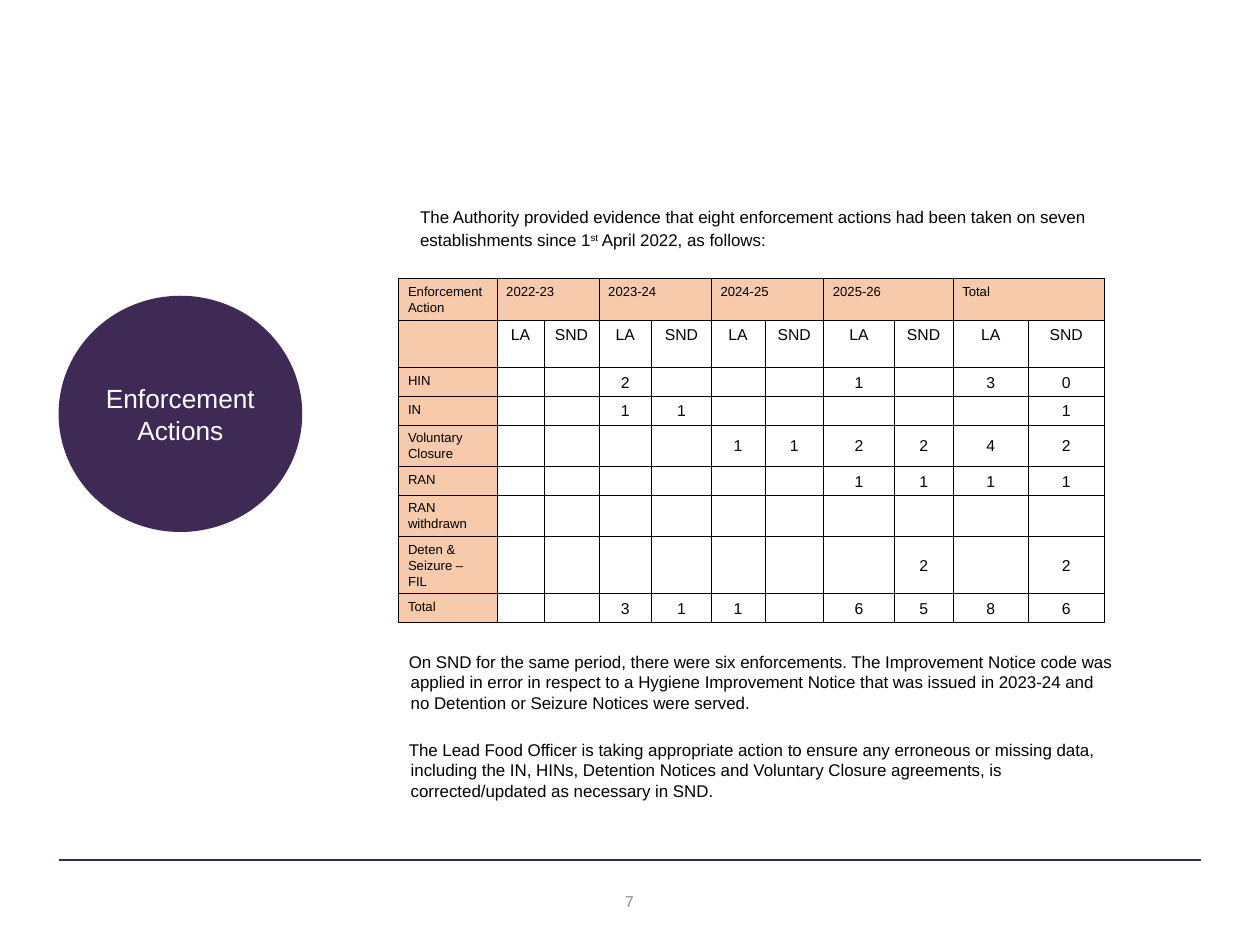
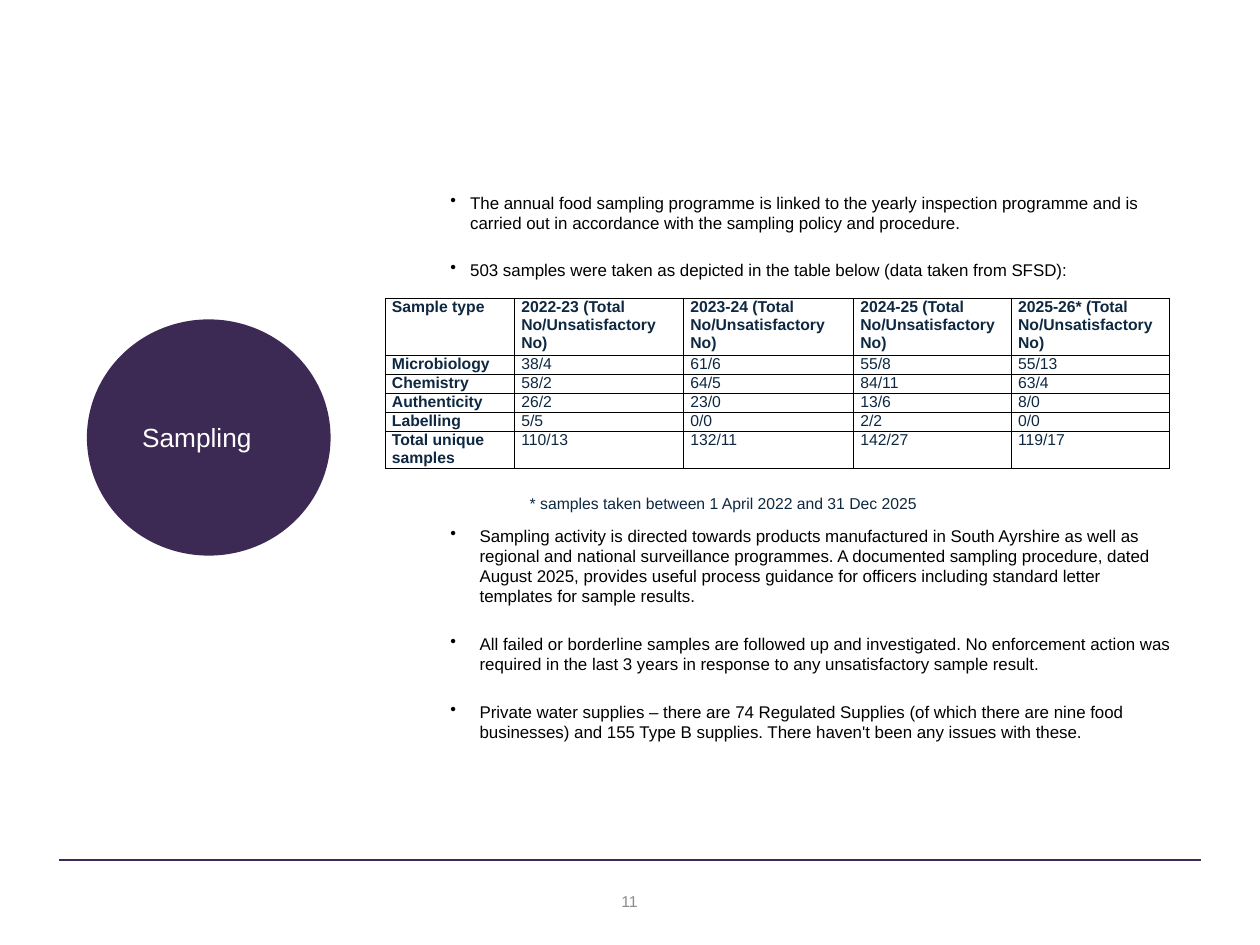
"""Build the enforcement and sampling slides of an audit presentation."""
import lxml.etree
import pptx
import pptx.dml.color
import pptx.enum.shapes
import pptx.enum.text
import pptx.oxml.ns
import pptx.util

Inches = pptx.util.Inches
Pt = pptx.util.Pt
ALIGN = pptx.enum.text.PP_ALIGN
ANCHOR = pptx.enum.text.MSO_ANCHOR

COLOURS = {
    "purple": "3F2A56",
    "plum": "3D2A54",
    "peach": "F7CAAC",
    "navy": "0E2841",
    "grey": "8C8C8C",
    "black": "000000",
    "white": "FFFFFF",
}
FONT = "Arial"
BODY = {"size": 12.9, "colour": "black"}
BODY_LINE = {"line_spacing": Pt(15.4)}
LABEL = {"size": 10, "colour": "black"}
COUNT = {"size": 12, "colour": "black"}
LABEL_PARAGRAPH = {"line_spacing": Pt(12.1)}
COUNT_PARAGRAPH = {"line_spacing": Pt(14.6), "alignment": ALIGN.CENTER}

INTRO = (
    "The Authority provided evidence that eight enforcement actions had been taken "
    "on seven establishments since 1",
    "st",
    " April 2022, as follows:",
)
FINDINGS = [
    "On SND for the same period, there were six enforcements. The Improvement Notice "
    "code was applied in error in respect to a Hygiene Improvement Notice that was "
    "issued in 2023-24 and no Detention or Seizure Notices were served.",
    "The Lead Food Officer is taking appropriate action to ensure any erroneous or "
    "missing data, including the IN, HINs, Detention Notices and Voluntary Closure "
    "agreements, is corrected/updated as necessary in SND.",
]
PERIODS = ["2022-23", "2023-24", "2024-25", "2025-26", "Total"]
ACTIONS = {
    "HIN": ["", "", "2", "", "", "", "1", "", "3", "0"],
    "IN": ["", "", "1", "1", "", "", "", "", "", "1"],
    "Voluntary Closure": ["", "", "", "", "1", "1", "2", "2", "4", "2"],
    "RAN": ["", "", "", "", "", "", "1", "1", "1", "1"],
    "RAN withdrawn": [""] * 10,
    "Deten & Seizure – FIL": ["", "", "", "", "", "", "", "2", "", "2"],
    "Total": ["", "", "3", "1", "1", "", "6", "5", "8", "6"],
}
ACTION_COLUMNS = [1.04, 0.5, 0.58, 0.56, 0.63, 0.57, 0.62, 0.75, 0.62, 0.8, 0.8]
ACTION_ROWS = [0.44, 0.5, 0.3, 0.3, 0.44, 0.3, 0.44, 0.6, 0.3]

PROGRAMME = [
    "The annual food sampling programme is linked to the yearly inspection programme "
    "and is carried out in accordance with the sampling policy and procedure.",
    "503 samples were taken as depicted in the table below (data taken from SFSD):",
]
FOLLOW_UP = [
    "Sampling activity is directed towards products manufactured in South Ayrshire as "
    "well as regional and national surveillance programmes. A documented sampling "
    "procedure, dated August 2025, provides useful process guidance for officers "
    "including standard letter templates for sample results.",
    "All failed or borderline samples are followed up and investigated. No enforcement "
    "action was required in the last 3 years in response to any unsatisfactory sample "
    "result.",
    "Private water supplies – there are 74 Regulated Supplies (of which there are nine "
    "food businesses) and 155 Type B supplies. There haven't been any issues with these.",
]
SAMPLE_YEARS = ["2022-23", "2023-24", "2024-25", "2025-26*"]
SAMPLES = {
    "Microbiology": ["38/4", "61/6", "55/8", "55/13"],
    "Chemistry": ["58/2", "64/5", "84/11", "63/4"],
    "Authenticity": ["26/2", "23/0", "13/6", "8/0"],
    "Labelling": ["5/5", "0/0", "2/2", "0/0"],
    "Total unique samples": ["110/13", "132/11", "142/27", "119/17"],
}
SAMPLE_COLUMNS = [1.37, 1.79, 1.8, 1.67, 1.67]
SAMPLE_ROWS = [0.56, 0.2, 0.2, 0.2, 0.2, 0.37]


def rgb(colour):
    """Return the named colour."""
    return pptx.dml.color.RGBColor.from_string(COLOURS[colour])


def set_values(target, values):
    """Set each attribute of the target from a dict."""
    for attribute, value in values.items():
        setattr(target, attribute, value)


def add_run(paragraph, text, size, colour, bold=False):
    """Add a styled run to a paragraph."""
    run = paragraph.add_run()
    run.text = text
    set_values(run.font, {"name": FONT, "size": Pt(size), "bold": bold})
    run.font.color.rgb = rgb(colour)
    return run


def set_indent(paragraph, left, first, bullet=False):
    """Give a paragraph its indents and, if wanted, a bullet."""
    properties = paragraph._p.get_or_add_pPr()
    properties.set("marL", str(Inches(left)))
    properties.set("indent", str(Inches(first)))
    if bullet:
        tag = pptx.oxml.ns.qn("a:buChar")
        lxml.etree.SubElement(properties, tag).set("char", "•")


def add_text_box(slide, left, top, width, height):
    """Add a wrapping text box and return its frame."""
    box = slide.shapes.add_textbox(*map(Inches, (left, top, width, height)))
    box.text_frame.word_wrap = True
    return box.text_frame


def add_paragraphs(slide, place, texts, indent, gap, bullet=False):
    """Add body paragraphs set apart by an even gap."""
    frame = add_text_box(slide, *place)
    for number, text in enumerate(texts):
        paragraph = frame.add_paragraph() if number else frame.paragraphs[0]
        set_indent(paragraph, *indent, bullet)
        set_values(paragraph, BODY_LINE)
        if number:
            paragraph.space_before = Pt(gap)
        add_run(paragraph, text, **BODY)


def add_title_disc(slide, left, top, title, colour, right_inset=0.1):
    """Add the round slide title."""
    disc = slide.shapes.add_shape(
        pptx.enum.shapes.MSO_SHAPE.OVAL, *map(Inches, (left, top, 2.58, 2.5)))
    disc.shadow.inherit = False
    disc.fill.solid()
    disc.fill.fore_color.rgb = rgb(colour)
    disc.line.fill.background()
    frame = disc.text_frame
    set_values(frame, {"word_wrap": True, "vertical_anchor": ANCHOR.MIDDLE,
                       "margin_right": Inches(right_inset)})
    frame.paragraphs[0].alignment = ALIGN.CENTER
    add_run(frame.paragraphs[0], title, 20, "white")


def add_footer(slide, number):
    """Add the footer rule and the page number."""
    rule = slide.shapes.add_connector(
        pptx.enum.shapes.MSO_CONNECTOR.STRAIGHT, *map(Inches, (0.62, 9.1, 12.72, 9.1)))
    rule.line.color.rgb = rgb("purple")
    rule.line.width = Pt(1)
    lxml.etree.SubElement(rule._element.spPr, pptx.oxml.ns.qn("a:effectLst"))
    frame = add_text_box(slide, 5.11, 9.27, 3.11, 0.53)
    frame.vertical_anchor = ANCHOR.MIDDLE
    frame.paragraphs[0].alignment = ALIGN.CENTER
    add_run(frame.paragraphs[0], str(number), 12, "grey")


def add_slide(presentation, number):
    """Add a blank slide with the footer."""
    slide = presentation.slides.add_slide(presentation.slide_layouts[6])
    add_footer(slide, number)
    return slide


def add_grid(slide, left, top, columns, rows, border):
    """Add a plain table with black borders."""
    place = map(Inches, (left, top, sum(columns), sum(rows)))
    grid = slide.shapes.add_table(len(rows), len(columns), *place).table
    set_values(grid, {"first_row": False, "horz_banding": False})
    for column, width in zip(grid.columns, columns):
        column.width = Inches(width)
    for row, height in zip(grid.rows, rows):
        row.height = Inches(height)
    qn = pptx.oxml.ns.qn
    for cell in grid.iter_cells():
        properties = cell._tc.get_or_add_tcPr()
        for side in ("a:lnL", "a:lnR", "a:lnT", "a:lnB"):
            edge = lxml.etree.SubElement(properties, qn(side), w=str(Pt(border)))
            fill = lxml.etree.SubElement(edge, qn("a:solidFill"))
            lxml.etree.SubElement(fill, qn("a:srgbClr"), val=COLOURS["black"])
        cell.fill.background()
    return grid


def fill_cell(cell, text, style, paragraph_values, cell_values, fill=None):
    """Write one table cell and set its format."""
    set_values(cell, cell_values)
    if fill:
        cell.fill.solid()
        cell.fill.fore_color.rgb = rgb(fill)
    paragraph = cell.text_frame.paragraphs[0]
    set_values(paragraph, paragraph_values)
    if text:
        add_run(paragraph, text, **style)
    else:
        end = lxml.etree.SubElement(paragraph._p, pptx.oxml.ns.qn("a:endParaRPr"))
        end.set("sz", str(style["size"] * 100))


def add_action_table(slide):
    """Add the table of enforcement actions by year."""
    grid = add_grid(slide, 4.22, 2.95, ACTION_COLUMNS, ACTION_ROWS, 0.5)
    label = (LABEL, LABEL_PARAGRAPH, {"margin_right": Inches(0.12)}, "peach")
    for number, period in enumerate(PERIODS):
        first = 2 * number + 1
        grid.cell(0, first).merge(grid.cell(0, first + 1))
        fill_cell(grid.cell(0, first), period, *label)
    names = ["Enforcement Action", "", *ACTIONS]
    for row, name in enumerate(names):
        fill_cell(grid.cell(row, 0), name, *label)
    for row, counts in enumerate([["LA", "SND"] * 5, *ACTIONS.values()], 1):
        anchor = ANCHOR.TOP if row == 1 else ANCHOR.MIDDLE
        for column, count in enumerate(counts, 1):
            fill_cell(grid.cell(row, column), count, COUNT, COUNT_PARAGRAPH,
                      {"vertical_anchor": anchor})


def add_sample_table(slide):
    """Add the table of samples by type and year."""
    grid = add_grid(slide, 4.08, 3.16, SAMPLE_COLUMNS, SAMPLE_ROWS, 1)
    margins = {"margin_left": Inches(0.07), "margin_right": Inches(0.07),
               "margin_top": 0, "margin_bottom": 0}
    header = [f"{year} (Total No/Unsatisfactory No)" for year in SAMPLE_YEARS]
    table_rows = {"Sample type": header, **SAMPLES}
    for row, (sample_type, results) in enumerate(table_rows.items()):
        for column, text in enumerate([sample_type, *results]):
            style = {"size": 12, "colour": "navy", "bold": row == 0 or column == 0}
            fill_cell(grid.cell(row, column), text, style, {}, margins)


def add_intro(slide):
    """Add the opening sentence with its raised ordinal."""
    paragraph = add_text_box(slide, 4.04, 2.11, 7.84, 0.6).paragraphs[0]
    set_indent(paragraph, 0.31, 0)
    paragraph.line_spacing = Pt(17.4)
    before, ordinal, after = INTRO
    add_run(paragraph, before, **BODY)
    raised = add_run(paragraph, ordinal, **BODY)
    raised._r.get_or_add_rPr().set("baseline", "30000")
    add_run(paragraph, after, **BODY)


def build_enforcement(presentation):
    """Build the enforcement actions slide."""
    slide = add_slide(presentation, 7)
    add_intro(slide)
    add_paragraphs(slide, (4.04, 6.85, 7.84, 1.7), FINDINGS, (0.21, -0.02), 20.8)
    add_title_disc(slide, 0.62, 3.13, "Enforcement Actions", "purple")
    add_action_table(slide)


def build_sampling(presentation):
    """Build the sampling slide."""
    slide = add_slide(presentation, 11)
    add_paragraphs(slide, (4.67, 1.99, 7.84, 1.1), PROGRAMME, (0.21, -0.21), 20.4, True)
    add_paragraphs(slide, (4.67, 5.51, 7.84, 2.5), FOLLOW_UP, (0.31, -0.31), 21, True)
    add_title_disc(slide, 0.92, 3.38, "Sampling", "plum", 0.35)
    add_sample_table(slide)
    footnote = add_text_box(slide, 5.51, 5.18, 4.49, 0.3).paragraphs[0]
    add_run(footnote, "* samples taken between 1 April 2022 and 31 Dec 2025", 12, "navy")


def main():
    """Build and save the presentation."""
    presentation = pptx.Presentation()
    set_values(presentation, {"slide_width": Inches(13.34), "slide_height": Inches(10)})
    build_enforcement(presentation)
    build_sampling(presentation)
    presentation.save("out.pptx")


if __name__ == "__main__":
    main()
